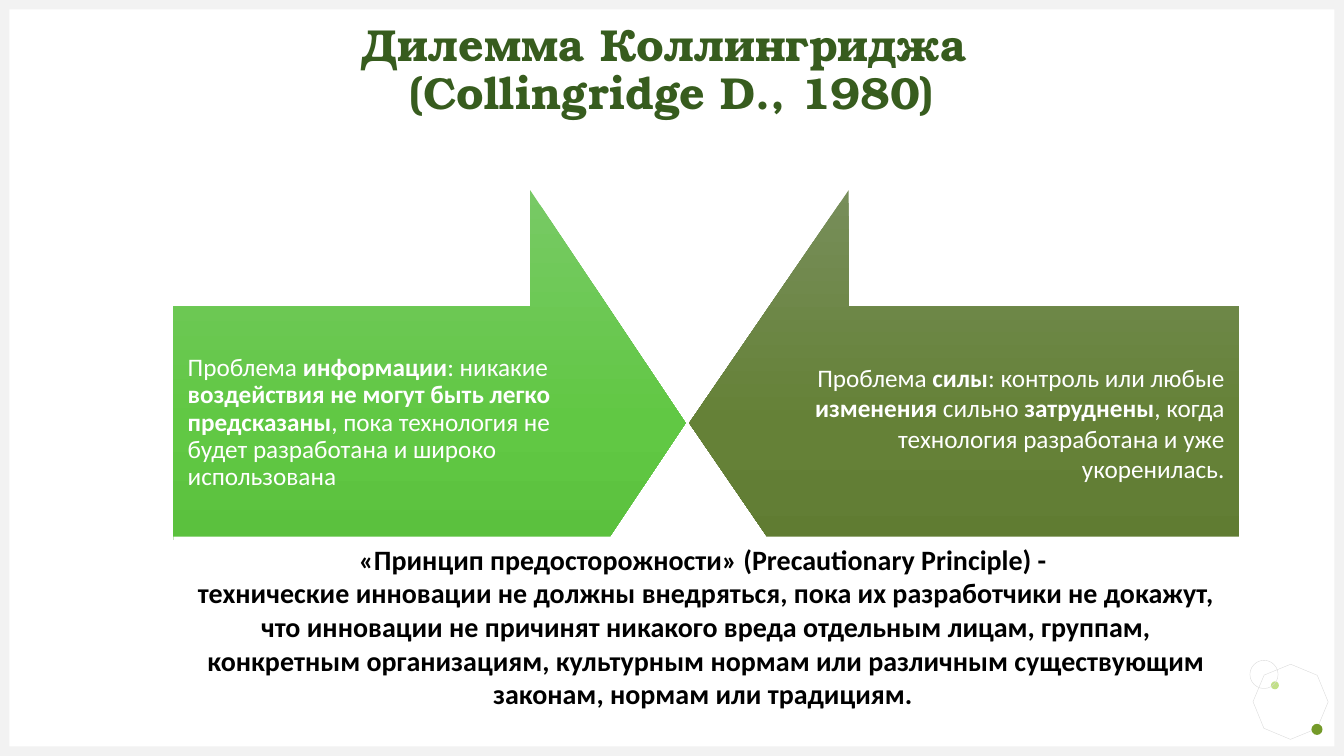
from copy import deepcopy

from pptx import Presentation
from pptx.dml.color import RGBColor
from pptx.enum.shapes import MSO_SHAPE
from pptx.enum.text import MSO_ANCHOR, MSO_AUTO_SIZE, PP_ALIGN
from pptx.util import Cm, Pt

WHITE = RGBColor(0xFF, 0xFF, 0xFF)
BLACK = RGBColor(0, 0, 0)
FRAME_GREY = RGBColor(0xF2, 0xF2, 0xF2)
OUTLINE_GREY = RGBColor(0xD9, 0xD9, 0xD9)
PALE_GREEN = RGBColor(0xC2, 0xE0, 0x88)
DOT_GREEN = RGBColor(0x74, 0x9A, 0x29)
TITLE_GREEN = RGBColor(0x37, 0x5C, 0x1E)
BRIGHT_GREENS = [RGBColor(0x78, 0xC9, 0x65), RGBColor(0x61, 0xC8, 0x44), RGBColor(0x52, 0xB8, 0x36)]
OLIVE_GREENS = [RGBColor(0x77, 0x8E, 0x5A), RGBColor(0x65, 0x81, 0x37), RGBColor(0x5A, 0x76, 0x2D)]


def write_text(shape, paragraphs, *, size, color, font="Calibri", align=PP_ALIGN.CENTER,
               line_spacing=1.0, insets=(0.25, 0.13, 0.25, 0.13)):
    """Fill a shape with paragraphs; each is a list of runs, alternately regular and bold."""
    frame = shape.text_frame
    frame.word_wrap = True
    frame.auto_size = MSO_AUTO_SIZE.NONE
    frame.vertical_anchor = MSO_ANCHOR.MIDDLE
    frame.margin_left, frame.margin_top, frame.margin_right, frame.margin_bottom = map(Cm, insets)
    for number, pieces in enumerate(paragraphs):
        paragraph = frame.add_paragraph() if number else frame.paragraphs[0]
        paragraph.alignment = align
        paragraph.line_spacing = line_spacing
        paragraph.space_before = paragraph.space_after = Pt(0)
        for position, piece in enumerate(pieces):
            if not piece:
                continue
            for row, line in enumerate(piece.split("\n")):
                if row:
                    paragraph.add_line_break()
                run = paragraph.add_run()
                run.text = line
                run.font.name = font
                run.font.size = Pt(size)
                run.font.bold = position % 2 == 1
                run.font.color.rgb = color


def add_plain(kind, left, top, width, height, fill=None, outline=None):
    shape = slide.shapes.add_shape(kind, Cm(left), Cm(top), Cm(width), Cm(height))
    shape.shadow.inherit = False
    if fill is None:
        shape.fill.background()
    else:
        shape.fill.solid()
        shape.fill.fore_color.rgb = fill
    if outline is None:
        shape.line.fill.background()
    else:
        shape.line.color.rgb = outline
        shape.line.width = Pt(0.25)
    return shape


presentation = Presentation()
presentation.slide_width = Cm(33.87)
presentation.slide_height = Cm(19.05)
slide = presentation.slides.add_slide(presentation.slide_layouts[5])

# Corner ornament and frame
octagon = add_plain(MSO_SHAPE.OCTAGON, 31.65, 16.81, 1.75, 1.75, outline=OUTLINE_GREY)
octagon.rotation = 22.7
for left, top, diameter, fill, outline in [
    (32.03, 17.17, 0.2, PALE_GREEN, None),
    (33.05, 18.24, 0.28, DOT_GREEN, None),
    (31.5, 16.64, 0.71, None, OUTLINE_GREY),
]:
    add_plain(MSO_SHAPE.OVAL, left, top, diameter, diameter, fill, outline)
for left, top, width, height in [
    (0, 18.81, 33.87, 0.24),
    (0, 0, 33.87, 0.24),
    (0, 0, 0.24, 19.05),
    (33.63, 0, 0.24, 19.05),
]:
    add_plain(MSO_SHAPE.RECTANGLE, left, top, width, height, FRAME_GREY)

title = slide.shapes.title
title.left, title.top, title.width, title.height = Cm(1.19), Cm(1.19), Cm(33.87 - 2.38), Cm(1.2)
write_text(title, [["", "Дилемма Коллингриджа \n(Collingridge D., 1980)"]], size=32,
           color=TITLE_GREEN, font="TeX Gyre Bonum", line_spacing=0.9, insets=(0, 0, 0, 0))

# Opposing arrows: tail edge, head base and tip in cm from the left
head_top, shaft_top, tip_level, shaft_bottom, head_bottom = 4.79, 7.72, 10.66, 13.59, 16.53
information = ["Проблема ", "информации", ": никакие ", "воздействия не могут быть легко предсказаны",
               ", пока технология не будет разработана и широко использована"]
power = ["Проблема ", "силы", ": контроль или любые ", "изменения", " сильно ", "затруднены",
         ", когда технология разработана и уже укоренилась."]
for tail, base, tip, greens, problem, align, line_spacing, insets in [
    (4.37, 13.36, 17.28, BRIGHT_GREENS, information, PP_ALIGN.LEFT, 0.9, (0.36, 2.39, 1.78, 2.39)),
    (31.22, 21.39, 17.37, OLIVE_GREENS, power, PP_ALIGN.RIGHT, 1.0, (1.88, 2.54, 0.36, 2.54)),
]:
    corners = [(base, head_bottom), (base, shaft_bottom), (tail, shaft_bottom), (tail, shaft_top),
               (base, shaft_top), (base, head_top), (tip, tip_level)]
    points = [(round(x * 100), round(y * 100)) for x, y in corners]
    builder = slide.shapes.build_freeform(*points[0], scale=Cm(0.01))
    builder.add_line_segments(points[1:], close=True)
    arrow = builder.convert_to_shape()
    arrow.shadow.inherit = False
    arrow.line.fill.background()
    arrow.fill.gradient()
    arrow.fill.gradient_angle = 270
    first_stop = arrow.fill.gradient_stops[0]._gs
    first_stop.addnext(deepcopy(first_stop))
    for stop, position, green in zip(arrow.fill.gradient_stops, (0, 0.5, 1), greens):
        stop.position = position
        stop.color.rgb = green
    write_text(arrow, [problem], size=18, color=WHITE, align=align,
               line_spacing=line_spacing, insets=insets)

# The panel covers the lower part of both arrow heads
principle = add_plain(MSO_SHAPE.RECTANGLE, 4.37, 13.52, 26.85, 4.52, WHITE)
write_text(principle, [
    ["", "«Принцип предосторожности» (Precautionary Principle) - "],
    ["", "технические инновации не должны внедряться, пока их разработчики не докажут, "
         "что инновации не причинят никакого вреда отдельным лицам, группам, конкретным "
         "организациям, культурным нормам или различным существующим законам, нормам "
         "или традициям. "],
], size=20, color=BLACK)

presentation.save("out.pptx")
